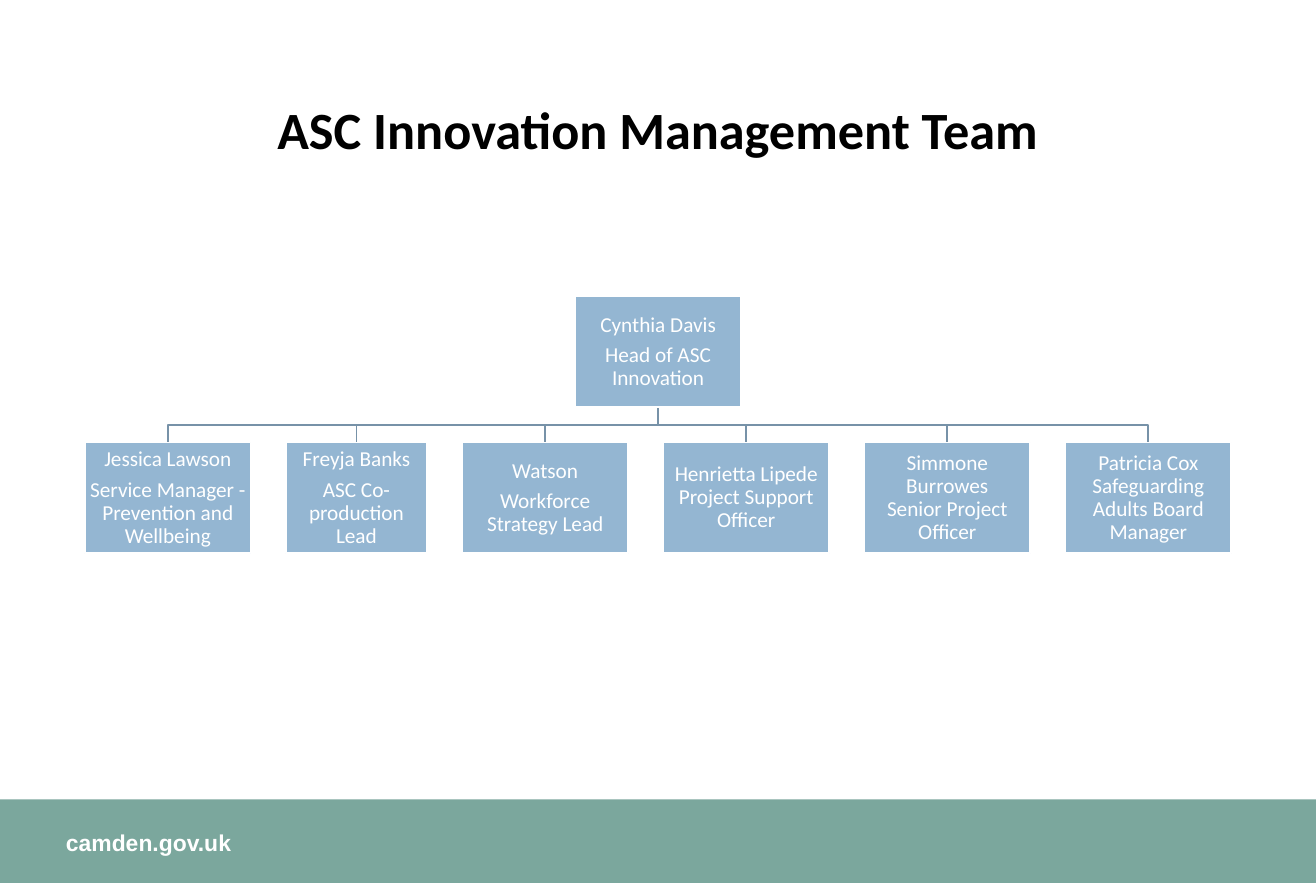
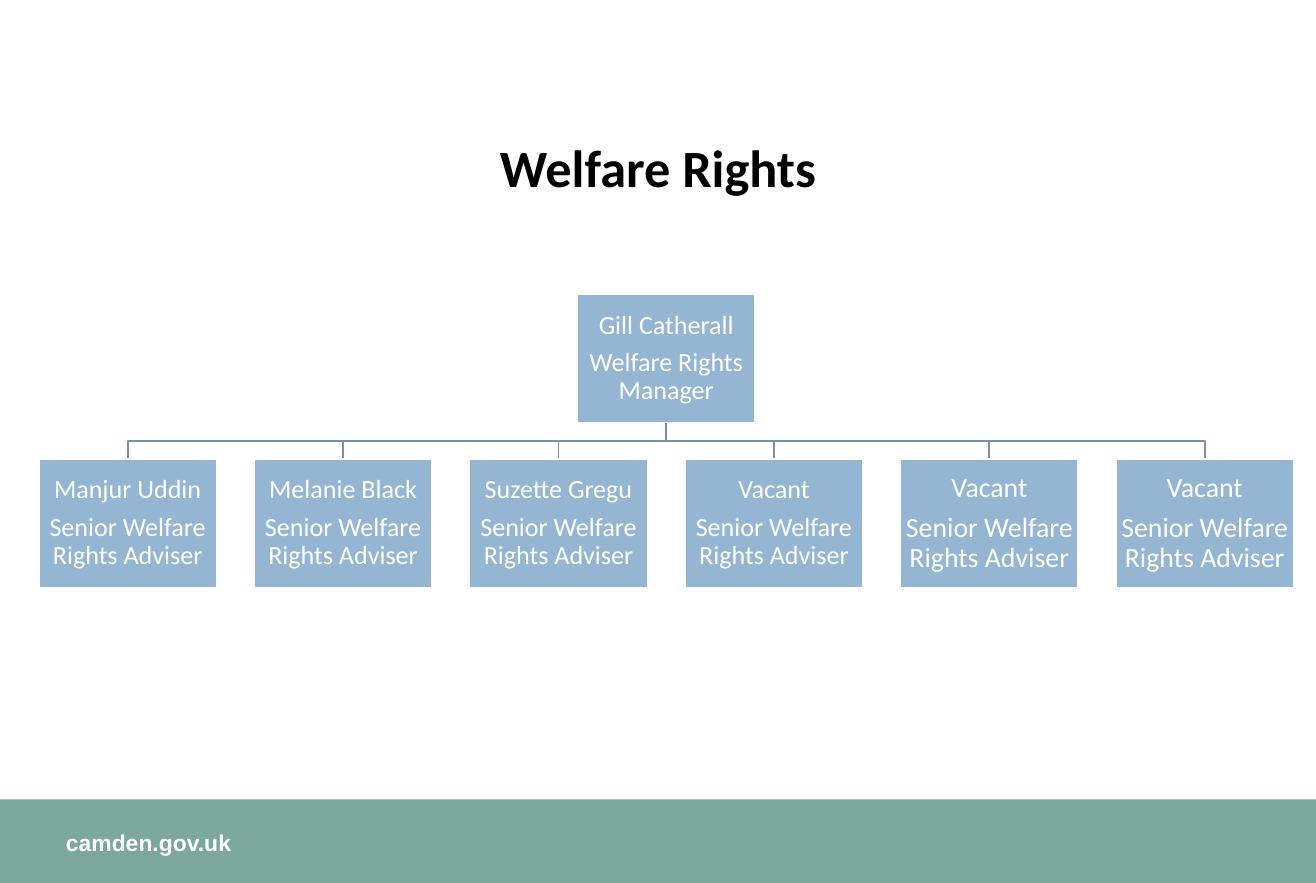
from dataclasses import dataclass

from pptx import Presentation
from pptx.dml.color import RGBColor
from pptx.enum.shapes import MSO_SHAPE
from pptx.enum.text import MSO_ANCHOR, MSO_AUTO_SIZE, PP_ALIGN
from pptx.util import Inches, Pt

RECT = MSO_SHAPE.RECTANGLE
MIDDLE = MSO_ANCHOR.MIDDLE
CENTER = PP_ALIGN.CENTER
NO_FIT = MSO_AUTO_SIZE.NONE
TITLE_ONLY = 5


@dataclass(frozen=True)
class Theme:
    band: RGBColor = RGBColor(0x7B, 0xA7, 0x9D)
    box: RGBColor = RGBColor(0x94, 0xB6, 0xD2)
    link: RGBColor = RGBColor(0x77, 0x92, 0xA8)
    light: RGBColor = RGBColor(0xFF, 0xFF, 0xFF)
    dark: RGBColor = RGBColor(0x00, 0x00, 0x00)
    font: str = "Calibri"
    footer_font: str = "Arial"
    title_size: int = 32
    footer_size: int = 14
    line: float = 1
    line_spacing: float = 0.9
    para_gap: float = 0.35  # share of the type size


@dataclass(frozen=True)
class Person:
    lines: tuple
    size: int
    width: float


THEME = Theme()
WIDTH, HEIGHT = 11.18, 7.5


def format_runs(p, font, size, color, bold=False):
    for r in p.runs:
        r.font.name = font
        r.font.size = Pt(size)
        r.font.bold = bold
        r.font.color.rgb = color


def add_master_footer(prs, s, top, height):
    """Draw the footer on slide s, then hand it over to the slide master."""
    band = s.shapes.add_shape(RECT, 0, Inches(top), Inches(WIDTH), Inches(height))
    band.shadow.inherit = False
    band.fill.solid()
    band.fill.fore_color.rgb = THEME.band
    band.line.fill.background()

    label = s.shapes.add_textbox(Inches(0.56), Inches(top + 0.25), Inches(4.61), Inches(0.24))
    tf = label.text_frame
    tf.word_wrap = True
    tf.margin_left = tf.margin_top = tf.margin_bottom = 0
    tf.text = "camden.gov.uk"
    format_runs(tf.paragraphs[0], THEME.footer_font, THEME.footer_size, THEME.light, bold=True)

    for shape_id, sp in enumerate((band, label), start=101):
        sp.element.xpath(".//p:cNvPr")[0].set("id", str(shape_id))
        prs.slide_master.shapes.element.append(sp.element)


def add_title(s, text, box):
    sp = s.shapes.title
    sp.left, sp.top, sp.width, sp.height = map(Inches, box)
    tf = sp.text_frame
    tf.text = text
    tf.auto_size = NO_FIT
    tf.vertical_anchor = MIDDLE
    p = tf.paragraphs[0]
    p.alignment = CENTER
    p.line_spacing = THEME.line_spacing
    format_runs(p, THEME.font, THEME.title_size, THEME.dark, bold=True)


def add_person(s, person, left, top, height):
    sp = s.shapes.add_shape(RECT, Inches(left), Inches(top), Inches(person.width), Inches(height))
    sp.shadow.inherit = False
    sp.fill.solid()
    sp.fill.fore_color.rgb = THEME.box
    sp.line.color.rgb = THEME.light
    sp.line.width = Pt(THEME.line)
    tf = sp.text_frame
    tf.word_wrap = True
    tf.vertical_anchor = MIDDLE
    tf.margin_left = tf.margin_right = tf.margin_top = tf.margin_bottom = Inches(0.01)
    tf.text = "\n".join(person.lines)
    for p in tf.paragraphs:
        p.alignment = CENTER
        p.line_spacing = THEME.line_spacing
        p.space_after = Pt(person.size * THEME.para_gap)
        format_runs(p, THEME.font, person.size, THEME.light)


def add_link(s, start, end):
    """Elbow line that turns halfway down."""
    (x1, y1), (x2, y2) = start, end
    mid = (y1 + y2) / 2
    points = [(Inches(x), Inches(y)) for x, y in ((x1, y1), (x1, mid), (x2, mid), (x2, y2))]
    builder = s.shapes.build_freeform(*points[0])
    builder.add_line_segments(points[1:], close=False)
    sp = builder.convert_to_shape()
    sp.shadow.inherit = False
    sp.fill.background()
    sp.line.color.rgb = THEME.link
    sp.line.width = Pt(THEME.line)


def add_org_chart(s, box, box_height, head, team):
    """Head centred at the top of the box, team spread evenly along its bottom."""
    left, top, width, height = box
    gap = (width - sum(member.width for member in team)) / (len(team) - 1)
    team_top = top + height - box_height
    center = left + width / 2

    lefts = []
    for member in team:
        lefts.append(left)
        left += member.width + gap

    # Links lie behind the boxes
    for member, x in zip(team, lefts):
        add_link(s, (center, top + box_height), (x + member.width / 2, team_top))
    add_person(s, head, center - head.width / 2, top, box_height)
    for member, x in zip(team, lefts):
        add_person(s, member, x, team_top, box_height)


def innovation_slide(s):
    size, width = 13, 1.41
    add_title(s, "ASC Innovation Management Team", (0.77, 0.4, 9.64, 1.45))
    head = Person(("Cynthia Davis", "Head of ASC Innovation"), size, width)
    team = [
        Person(("Jessica Lawson", "Service Manager - Prevention and Wellbeing"), size, width),
        Person(("Freyja Banks", "ASC Co-production Lead"), size, 1.2),
        Person(("Watson", "Workforce Strategy Lead"), size, width),
        Person(("Henrietta Lipede Project Support Officer",), size, width),
        Person(("Simmone Burrowes\vSenior Project Officer",), size, width),
        Person(("Patricia Cox\vSafeguarding Adults Board Manager",), size, width),
    ]
    add_org_chart(s, (0.72, 2.52, 9.74, 2.18), 0.94, head, team)


def welfare_slide(s):
    size, width = 16, 1.51
    add_title(s, "Welfare Rights", (0.77, 1.03, 9.64, 0.83))
    head = Person(("Gill Catherall", "Welfare Rights Manager"), size, width)
    advisers = [
        ("Manjur Uddin", size), ("Melanie Black", size), ("Suzette Gregu", size),
        ("Vacant", size), ("Vacant", 17), ("Vacant", 17),
    ]
    team = [Person((name, "Senior Welfare Rights Adviser"), pt, width) for name, pt in advisers]
    add_org_chart(s, (0.33, 2.5, 10.66, 2.49), 1.09, head, team)


def main():
    prs = Presentation()
    prs.slide_width, prs.slide_height = Inches(WIDTH), Inches(HEIGHT)
    slides = [prs.slides.add_slide(prs.slide_layouts[TITLE_ONLY]) for _ in range(2)]
    add_master_footer(prs, slides[0], 6.79, 0.72)
    innovation_slide(slides[0])
    welfare_slide(slides[1])
    prs.save("out.pptx")


if __name__ == "__main__":
    main()
